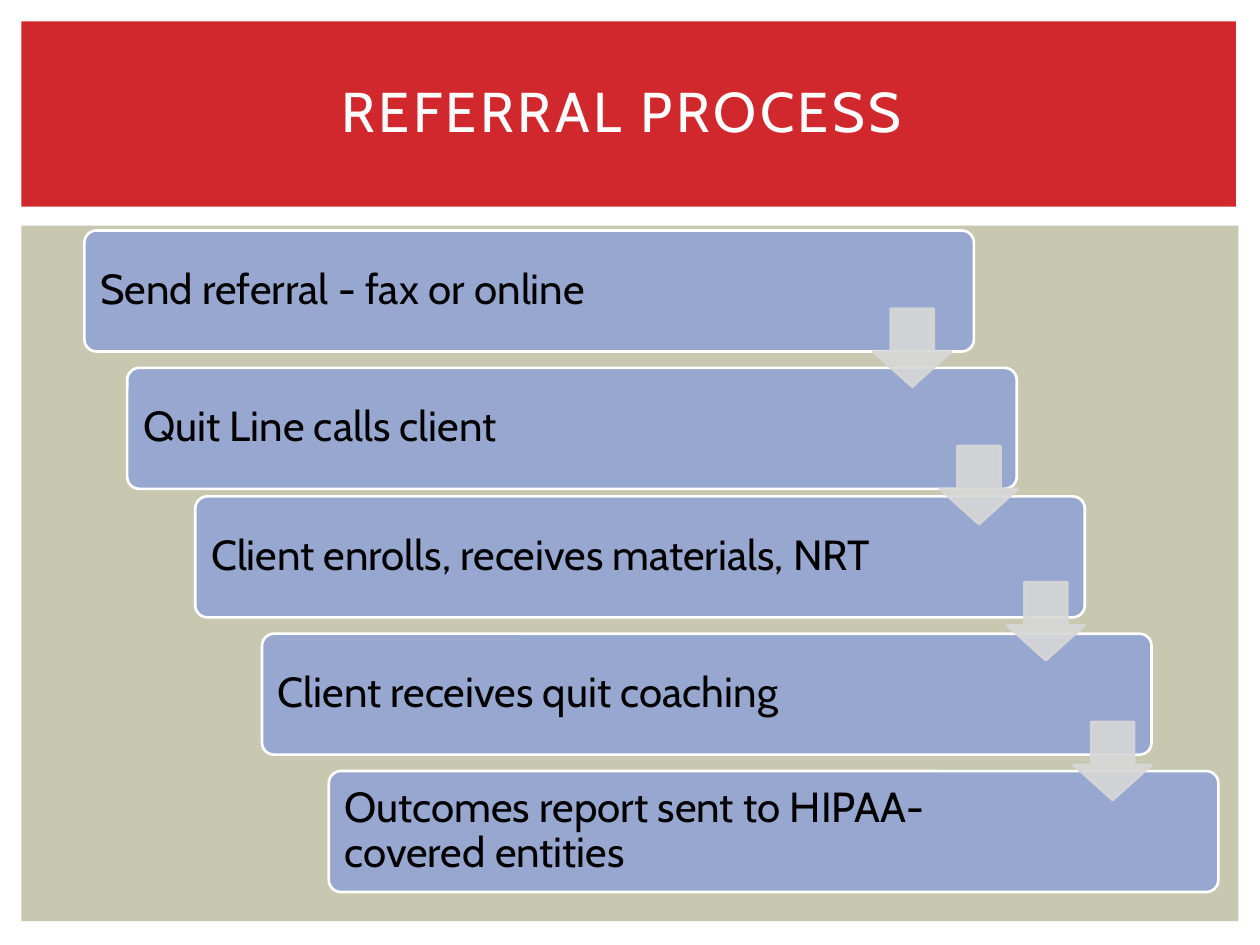
from lxml import etree
from pptx import Presentation
from pptx.dml.color import RGBColor
from pptx.enum.shapes import MSO_SHAPE
from pptx.enum.text import MSO_ANCHOR, PP_ALIGN
from pptx.oxml.ns import qn
from pptx.util import Inches, Pt

RECTANGLE = MSO_SHAPE.RECTANGLE
ROUNDED = MSO_SHAPE.ROUNDED_RECTANGLE
DOWN_ARROW = MSO_SHAPE.DOWN_ARROW
MIDDLE = MSO_ANCHOR.MIDDLE
LEFT, CENTER = PP_ALIGN.LEFT, PP_ALIGN.CENTER

FONT = "Cabin"
TITLE_ONLY = 5
WHITE, BLACK = "FFFFFF", "000000"
RED, SAND, BLUE, GREY = "D1282E", "C8C8B1", "97A7D0", "D7D7D7"

STEPS = [
    (0, 0, "Send referral - fax or online"),
    (0.34, 1.09, "Quit Line calls client"),
    (0.88, 2.11, "Client enrolls, receives materials, NRT"),
    (1.41, 3.2, "Client receives quit coaching"),
    (1.94, 4.29, "Outcomes report sent to HIPAA-covered entities"),
]
ARROW_TOPS = [0.62, 1.71, 2.79, 3.9]
ARROW_LEFT, ARROW_STEP, ARROW_SIZE = 6.26, 0.53, 0.62


def color(value):
    return RGBColor.from_string(value)


def add_filled_shape(slide, kind, box, fill, line=None):
    shape = slide.shapes.add_shape(kind, *(Inches(length) for length in box))
    shape.shadow.inherit = False
    shape.fill.solid()
    shape.fill.fore_color.rgb = color(fill)
    if line:
        shape.line.color.rgb = color(line)
        shape.line.width = Pt(1.5)
    else:
        shape.line.fill.background()
    return shape


def add_run(paragraph, text, size, font_color):
    run = paragraph.add_run()
    run.text = text
    run.font.name = FONT
    run.font.size = Pt(size)
    run.font.color.rgb = color(font_color)
    return run


def set_opacity(shape, percent):
    for rgb in shape.element.spPr.iter(qn("a:srgbClr")):
        etree.SubElement(rgb, qn("a:alpha")).set("val", str(percent * 1000))


def add_header(slide, box):
    left, top, width, height = box
    add_filled_shape(slide, RECTANGLE, box, RED)
    title = slide.shapes.title
    title.element.getparent().append(title.element)
    title.left, title.top = Inches(left + 0.33), Inches(top + 0.08)
    title.width, title.height = Inches(9), Inches(1.25)
    title.text_frame.vertical_anchor = MIDDLE
    paragraph = title.text_frame.paragraphs[0]
    paragraph.alignment = CENTER
    run = add_run(paragraph, "REFERRAL PROCESS ", 32, WHITE)
    run.font._element.set("spc", "200")


def add_step(slide, box, text):
    step = add_filled_shape(slide, ROUNDED, box, BLUE, WHITE)
    step.adjustments[0] = 0.1
    frame = step.text_frame
    frame.word_wrap = True
    frame.vertical_anchor = MIDDLE
    frame.margin_left = frame.margin_top = frame.margin_bottom = Inches(0.1)
    frame.margin_right = Inches(1.25)
    paragraph = frame.paragraphs[0]
    paragraph.alignment = LEFT
    paragraph.line_spacing = 0.9
    add_run(paragraph, text, 24, BLACK)


def add_arrow(slide, box):
    arrow = add_filled_shape(slide, DOWN_ARROW, box, GREY, GREY)
    arrow.adjustments[0] = 0.55
    arrow.adjustments[1] = 0.45
    set_opacity(arrow, 90)


def add_staircase(slide, box):
    left, top, width, height = box
    add_filled_shape(slide, RECTANGLE, box, SAND)
    left, top = left + 0.5, top + 0.04
    for step_left, step_top, text in STEPS:
        add_step(slide, (left + step_left, top + step_top, 7.06, 0.96), text)
    for index, arrow_top in enumerate(ARROW_TOPS):
        arrow_left = left + ARROW_LEFT + index * ARROW_STEP
        add_arrow(slide, (arrow_left, top + arrow_top, ARROW_SIZE, ARROW_SIZE))


def main():
    presentation = Presentation()
    presentation.slide_width = Inches(10)
    presentation.slide_height = Inches(7.5)
    slide = presentation.slides.add_slide(presentation.slide_layouts[TITLE_ONLY])
    slide.background.fill.solid()
    slide.background.fill.fore_color.rgb = color(WHITE)
    add_header(slide, (0.17, 0.17, 9.64, 1.47))
    add_staircase(slide, (0.17, 1.79, 9.66, 5.52))
    presentation.save("out.pptx")


if __name__ == "__main__":
    main()
